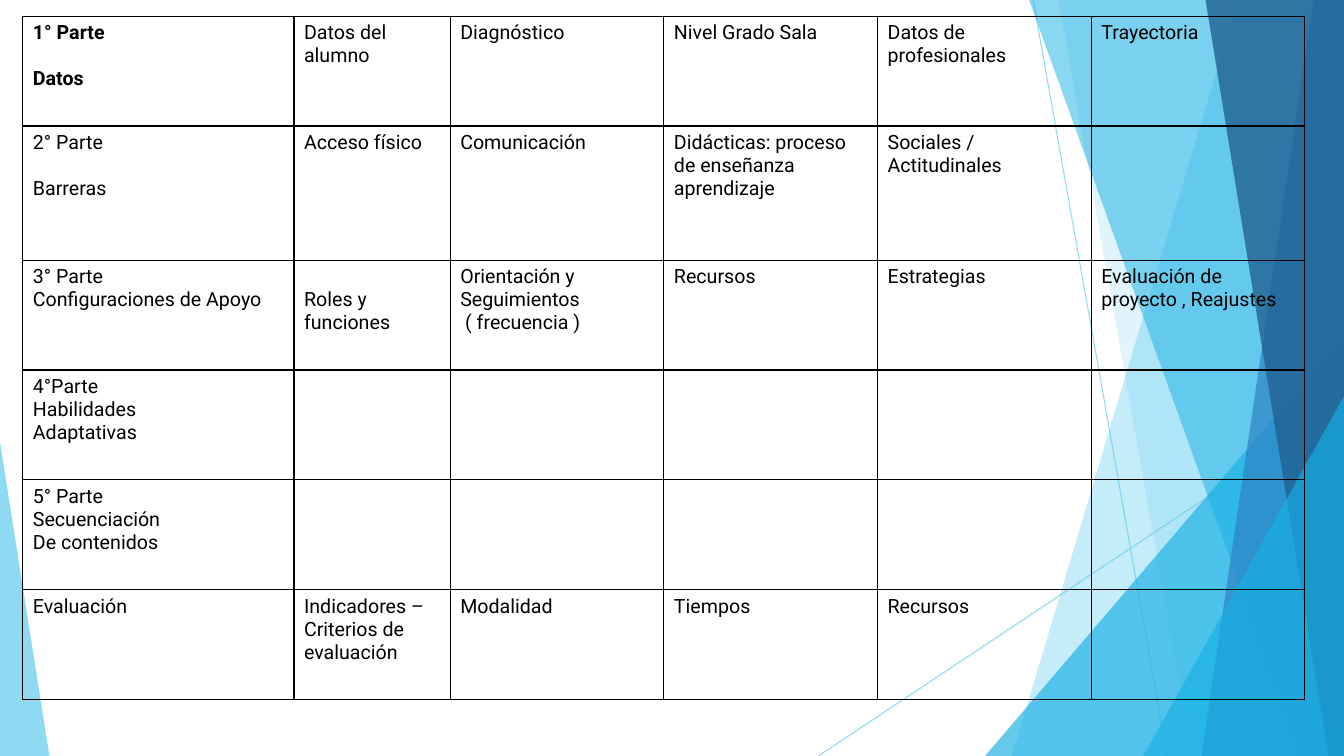
import pptx
import pptx.dml.color
import pptx.enum.shapes
import pptx.oxml
import pptx.oxml.ns
import pptx.util

Pt = pptx.util.Pt
RGBColor = pptx.dml.color.RGBColor
SHAPE = pptx.enum.shapes.MSO_SHAPE

WIDTH, HEIGHT = 960, 540
BLACK = RGBColor(0x00, 0x00, 0x00)
SKY = RGBColor(0x5F, 0xCB, 0xEF)
CYAN = RGBColor(0x17, 0xB0, 0xE4)
BLUE = RGBColor(0x2E, 0x83, 0xC3)
NAVY = RGBColor(0x22, 0x62, 0x92)

FONT, FONT_SIZE = "Roboto", 14
LINE_GAP = 16.4
CELL_TOP_MARGIN = 3.6
COLUMN_WIDTHS = [193.7, 111.6] + [152.64] * 4
ROW_HEIGHTS = [78.5, 95.8] + [78.5] * 4

# Each cell is a list of paragraphs; None leaves the height of one line.
ROWS = [
    [["1° Parte", None, "Datos"], ["Datos del alumno"], ["Diagnóstico"],
     ["Nivel Grado Sala"], ["Datos de profesionales"], ["Trayectoria"]],
    [["2° Parte", None, "Barreras"], ["Acceso físico"], ["Comunicación"],
     ["Didácticas: proceso de enseñanza aprendizaje"],
     ["Sociales / Actitudinales"], []],
    [["3° Parte", "Configuraciones de Apoyo"], [None, "Roles y funciones"],
     ["Orientación y Seguimientos", " ( frecuencia )"], ["Recursos"],
     ["Estrategias"], ["Evaluación de proyecto , Reajustes"]],
    [["4°Parte", "Habilidades", "Adaptativas"], [], [], [], [], []],
    [["5° Parte", "Secuenciación", "De contenidos"], [], [], [], [], []],
    [["Evaluación"], ["Indicadores –", "Criterios de evaluación"],
     ["Modalidad"], ["Tiempos"], ["Recursos"], []],
]


def make_element(parent, tag, **attributes):
    element = parent.makeelement(pptx.oxml.ns.qn(tag), attributes)
    parent.append(element)
    return element


def set_opacity(shape, percent):
    """Apply an opacity to the only colour of the shape."""
    for color in shape._element.spPr.iter(pptx.oxml.ns.qn("a:srgbClr")):
        make_element(color, "a:alpha", val=str(percent * 1000))


def paint(shape, color, opacity):
    shape.shadow.inherit = False
    shape.fill.solid()
    shape.fill.fore_color.rgb = color
    shape.line.fill.background()
    set_opacity(shape, opacity)


def add_thin_line(slide, start, end):
    line = slide.shapes.add_connector(
        pptx.enum.shapes.MSO_CONNECTOR.STRAIGHT,
        *(Pt(length) for length in (*start, *end)))
    line.line.color.rgb = SKY
    line.line.width = Pt(0.75)
    set_opacity(line, 70)
    make_element(line._element.spPr, "a:effectLst")


def add_band(slide, top_x, bottom_x, color, opacity):
    """Fill the slide from a slanted left edge to its right side."""
    builder = slide.shapes.build_freeform(Pt(top_x), 0)
    corners = [(WIDTH, 0), (WIDTH, HEIGHT), (bottom_x, HEIGHT)]
    builder.add_line_segments([(Pt(x), Pt(y)) for x, y in corners])
    paint(builder.convert_to_shape(), color, opacity)


def add_corner(slide, left, top, width, apex, color, opacity):
    """Add a triangle standing on the bottom edge, apex 0 left to 1 right."""
    triangle = slide.shapes.add_shape(
        SHAPE.ISOSCELES_TRIANGLE, Pt(left), Pt(top), Pt(width), Pt(HEIGHT - top))
    triangle.adjustments[0] = apex
    paint(triangle, color, opacity)


def add_background(slide):
    add_thin_line(slide, (738, 0), (833.8, HEIGHT))
    add_thin_line(slide, (WIDTH, 290.2), (584.6, HEIGHT))
    add_band(slide, 884.2, 722.9, SKY, 36)
    add_band(slide, 756, 851.8, SKY, 20)
    add_corner(slide, 703.6, 240, 256.4, 1, CYAN, 66)
    add_band(slide, 735.1, 929.5, CYAN, 50)
    add_band(slide, 938.2, 858.2, BLUE, 70)
    add_band(slide, 861.1, 949, NAVY, 80)
    add_corner(slide, 816.6, 283, 143.4, 1, CYAN, 66)
    add_corner(slide, 0, 316, 35.3, 0, SKY, 70)


def add_borders(cell):
    properties = cell._tc.get_or_add_tcPr()
    for side in ("a:lnL", "a:lnR", "a:lnT", "a:lnB"):
        border = make_element(properties, side, w=str(Pt(1)))
        fill = make_element(border, "a:solidFill")
        make_element(fill, "a:srgbClr", val=str(BLACK))


def write_cell(cell, lines, bold):
    add_borders(cell)
    cell.fill.background()
    cell.margin_top = Pt(CELL_TOP_MARGIN)
    frame = cell.text_frame
    paragraph, gap = None, 0
    for line in lines:
        if line is None:
            gap = LINE_GAP
            continue
        if paragraph is None:
            paragraph = frame.paragraphs[0]
            cell.margin_top = Pt(CELL_TOP_MARGIN + gap)
        else:
            paragraph = frame.add_paragraph()
            paragraph.space_before = Pt(gap)
        gap = 0
        run = paragraph.add_run()
        run.text = line
        run.font.name = FONT
        run.font.size = Pt(FONT_SIZE)
        run.font.bold = bold
        run.font.color.rgb = BLACK


def add_plan_table(slide):
    table = slide.shapes.add_table(
        len(ROWS), len(COLUMN_WIDTHS), Pt(16.3), Pt(11.5),
        Pt(sum(COLUMN_WIDTHS)), Pt(sum(ROW_HEIGHTS))).table
    table.first_row = False
    table.horz_banding = False
    for column, width in zip(table.columns, COLUMN_WIDTHS):
        column.width = Pt(width)
    for row_index, (height, row) in enumerate(zip(ROW_HEIGHTS, ROWS)):
        table.rows[row_index].height = Pt(height)
        for column_index, lines in enumerate(row):
            bold = row_index == column_index == 0
            write_cell(table.cell(row_index, column_index), lines, bold)


def main():
    presentation = pptx.Presentation()
    presentation.slide_width = Pt(WIDTH)
    presentation.slide_height = Pt(HEIGHT)
    slide = presentation.slides.add_slide(presentation.slide_layouts[6])
    add_background(slide)
    add_plan_table(slide)
    presentation.save("out.pptx")


if __name__ == "__main__":
    main()
